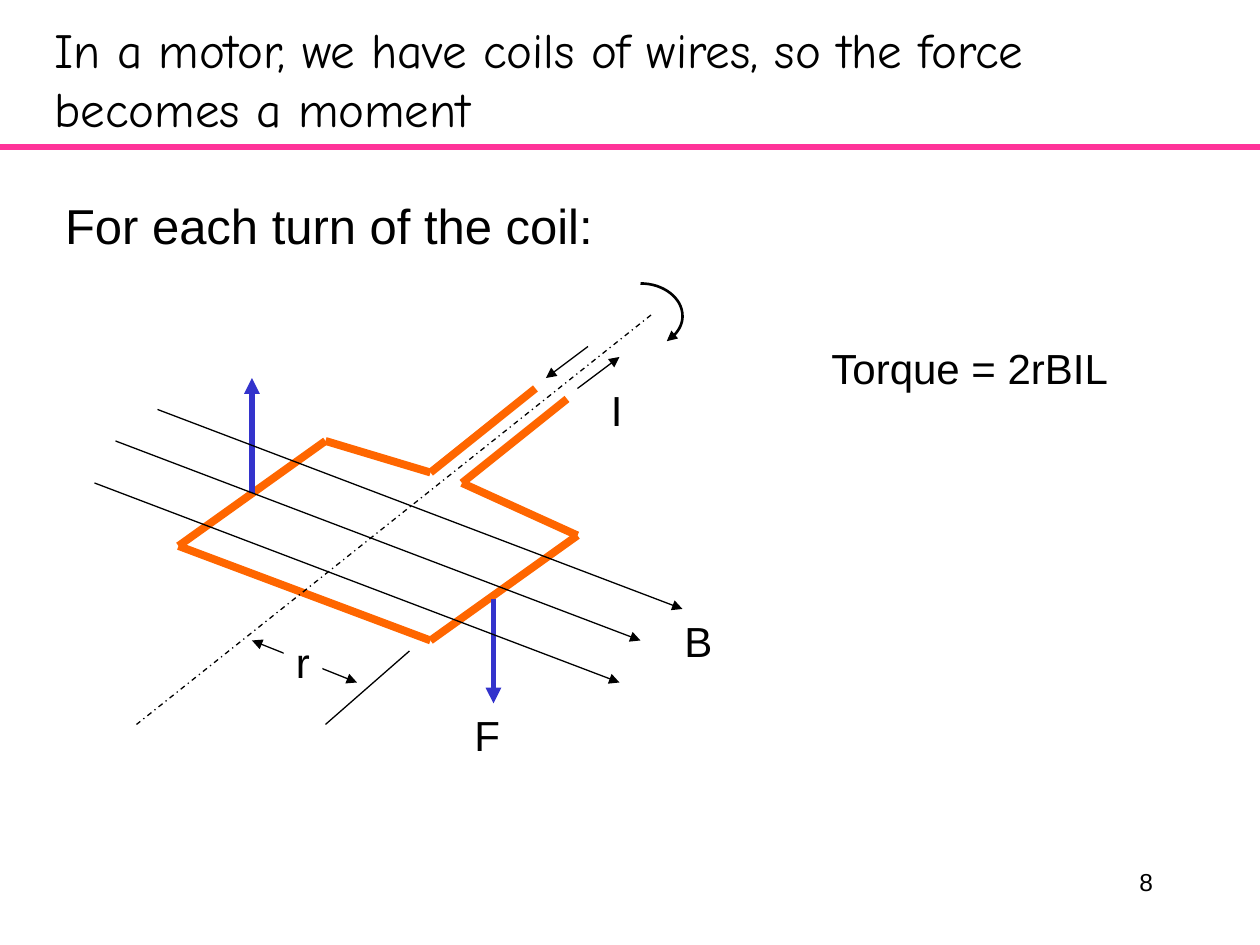
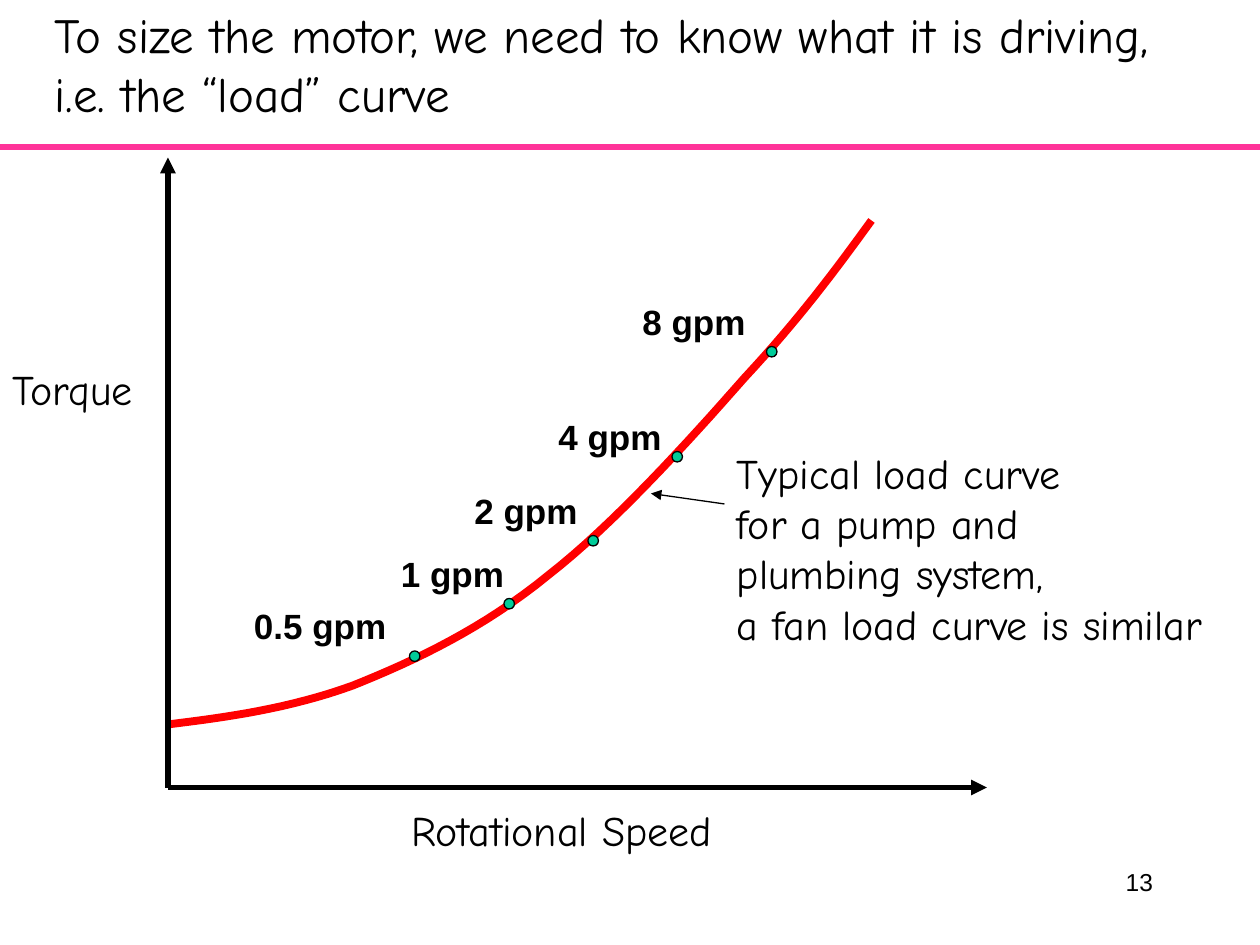
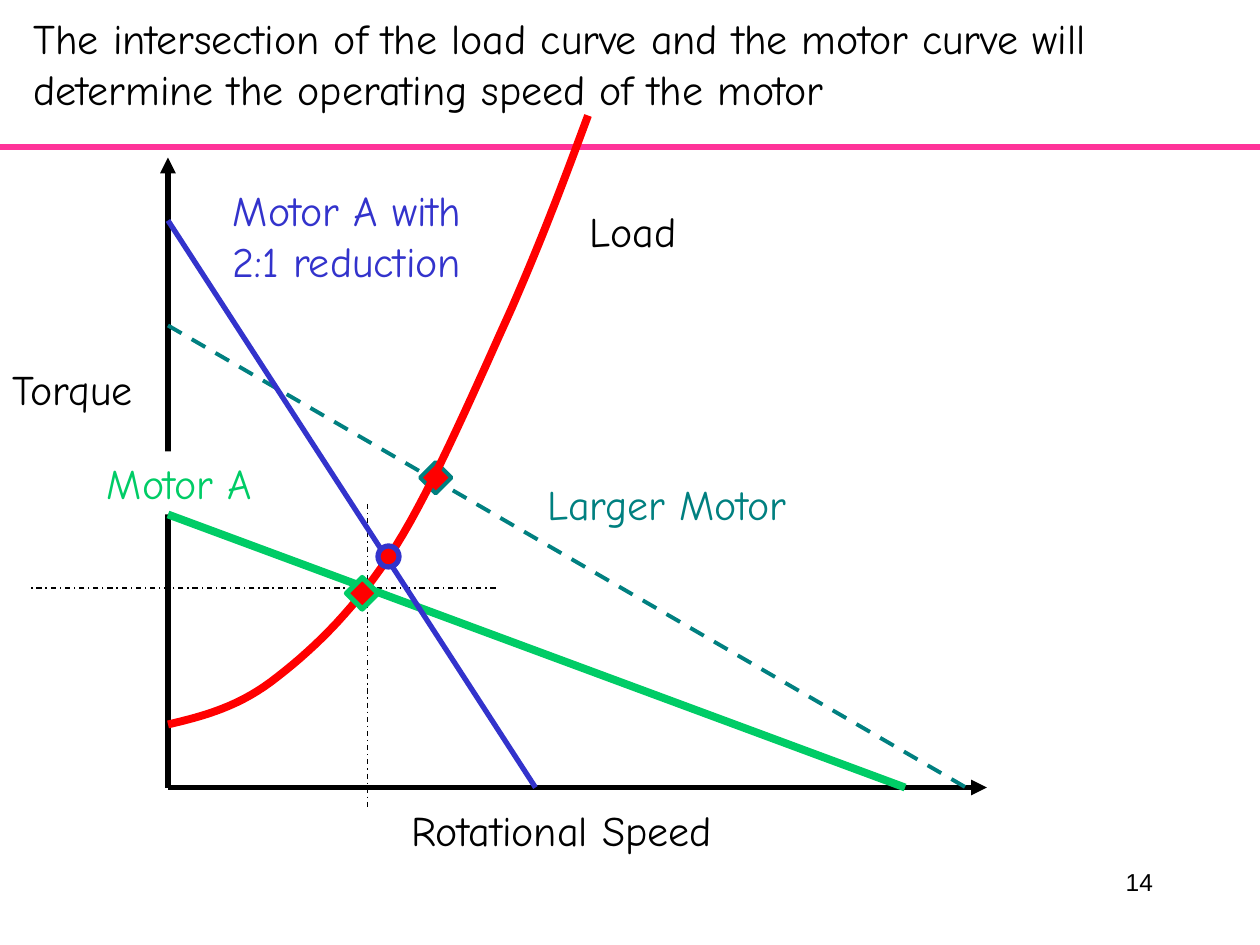
from dataclasses import dataclass
from itertools import pairwise

from lxml.etree import SubElement
from pptx import Presentation
from pptx.dml.color import RGBColor
from pptx.enum.dml import MSO_LINE
from pptx.enum.shapes import MSO_CONNECTOR, MSO_SHAPE
from pptx.enum.text import MSO_ANCHOR, MSO_AUTO_SIZE, PP_ALIGN
from pptx.oxml.ns import qn
from pptx.util import Cm, Pt


@dataclass(frozen=True)
class Theme:
    black: str = "000000"
    white: str = "FFFFFF"
    rule: str = "FF3399"
    coil: str = "FF6600"
    blue: str = "3333CC"
    red: str = "FF0000"
    teal: str = "008080"
    green: str = "00CC66"
    dot: str = "00CC99"
    plain_font: str = "Arial"
    hand_font: str = "Comic Neue"
    heading: int = 28
    label: int = 24
    point_label: int = 20
    page_number: int = 14
    hairline: float = 0.75
    thin: float = 1.5
    medium: float = 2.25
    thick: float = 3
    heavy: float = 4.5


THEME = Theme()
TITLE_AND_BODY, TITLE_ONLY = 1, 5
STEPS_ACROSS = 120
CURVE_SAMPLES = 16


def grid(steps):
    """Turn steps of the drawing grid (120 across the slide) into a length."""
    return Cm(steps * 25.4 / STEPS_ACROSS)


def write(frame, text, *, size=THEME.label, font=THEME.plain_font, color=THEME.black,
          bold=False, align=PP_ALIGN.LEFT, anchor=MSO_ANCHOR.TOP, wrap=False):
    """Fill a text frame, one paragraph for each line of text."""
    frame.word_wrap = wrap
    frame.auto_size = MSO_AUTO_SIZE.NONE
    frame.vertical_anchor = anchor
    frame.text = text
    for para in frame.paragraphs:
        para.alignment = align
        for span in para.runs:
            span.font.size = Pt(size)
            span.font.name = font
            span.font.bold = bold
            span.font.color.rgb = RGBColor.from_string(color)


def sample_curve(start, *segments):
    """Return points along joined cubic Bézier segments (control, control, end)."""
    points = [start]
    for first, second, end in segments:
        corners = (points[-1], first, second, end)
        for sample in range(1, CURVE_SAMPLES + 1):
            t = sample / CURVE_SAMPLES
            weights = ((1 - t) ** 3, 3 * t * (1 - t) ** 2, 3 * t * t * (1 - t), t ** 3)
            points.append(tuple(sum(weight * corner[axis] for weight, corner in zip(weights, corners))
                                for axis in (0, 1)))
    return points


class Sketcher:
    """Draws on the current page; every place and size is in grid steps."""

    def __init__(self, deck, theme):
        self.deck = deck
        self.theme = theme
        self.page = None

    def new_page(self, title, number, title_area, layout=TITLE_ONLY, size=THEME.heading):
        self.page = self.deck.slides.add_slide(self.deck.slide_layouts[layout])
        self.line((0, 14), (120, 14), color=self.theme.rule, width=self.theme.thick)
        self.text(str(number), (86, 82, 25, 6), size=self.theme.page_number,
                  align=PP_ALIGN.RIGHT, wrap=True)
        self.place(self.page.shapes.title, title_area)
        write(self.page.shapes.title.text_frame, title, size=size,
              font=self.theme.hand_font, anchor=MSO_ANCHOR.MIDDLE, wrap=True)

    def place(self, box, area):
        box.left, box.top, box.width, box.height = map(grid, area)

    def body(self, text, area):
        box = self.page.placeholders[1]
        self.place(box, area)
        write(box.text_frame, text, size=self.theme.heading, wrap=True)
        for para in box.element.iter(qn("a:p")):
            properties = para.get_or_add_pPr()
            properties.set("marL", str(Cm(0.95)))
            properties.set("indent", str(Cm(-0.95)))
            SubElement(properties, qn("a:buNone"))

    def text(self, text, area, **style):
        box = self.page.shapes.add_textbox(*map(grid, area))
        write(box.text_frame, text, **style)

    def shape(self, kind, area, fill, outline=None, width=THEME.hairline):
        shape = self.page.shapes.add_shape(kind, *map(grid, area))
        shape.shadow.inherit = False
        shape.fill.solid()
        shape.fill.fore_color.rgb = RGBColor.from_string(fill)
        if outline:
            self.stroke(shape, outline, width)
        else:
            shape.line.fill.background()
        return shape

    def plate(self, text, area, **style):
        """Draw a label on a white rectangle."""
        box = self.shape(MSO_SHAPE.RECTANGLE, area, self.theme.white)
        write(box.text_frame, text, **style)

    def stroke(self, shape, color, width, dash=None, head=False, tail=False):
        shape.line.color.rgb = RGBColor.from_string(color)
        shape.line.width = Pt(width)
        if dash:
            shape.line.dash_style = dash
        for wanted, tag in ((head, "a:headEnd"), (tail, "a:tailEnd")):
            if wanted:
                SubElement(shape.get_or_add_ln(), qn(tag), type="triangle")

    def line(self, start, end, color=THEME.black, width=THEME.hairline, **ends):
        connector = self.page.shapes.add_connector(
            MSO_CONNECTOR.STRAIGHT, *map(grid, (*start, *end)))
        self.stroke(connector, color, width, **ends)
        SubElement(connector.element.spPr, qn("a:effectLst"))

    def curve(self, points, color, width, **ends):
        start, *others = [(grid(x), grid(y)) for x, y in points]
        builder = self.page.shapes.build_freeform(*start)
        builder.add_line_segments(others, close=False)
        shape = builder.convert_to_shape()
        shape.shadow.inherit = False
        shape.fill.background()
        self.stroke(shape, color, width, **ends)

    def axes(self):
        origin = (16, 75)
        for tip in ((16, 15), (94, 75)):
            self.line(origin, tip, width=self.theme.thick, tail=True)
        self.text("Rotational Speed", (38, 76, 34.2, 6), font=self.theme.hand_font)
        self.text("Torque", (0, 34, 15.5, 6), font=self.theme.hand_font)


def draw_coil_page(sketch):
    theme = sketch.theme
    sketch.new_page("In a motor, we have coils of wires, so the force becomes a moment",
                    8, (4, 0, 102, 15), layout=TITLE_AND_BODY)
    sketch.body("For each turn of the coil:", (5, 18, 102, 54))

    coil = [(51, 37), (41, 45), (31, 42), (17, 52), (41, 61), (55, 51), (44, 46), (54, 38)]
    for start, end in pairwise(coil):
        sketch.line(start, end, color=theme.coil, width=theme.heavy)
    sketch.line((62, 30), (13, 69), dash=MSO_LINE.DASH_DOT)

    forces = [((47, 57), (47, 67)), ((24, 47), (24, 36))]
    for start, end in forces:
        sketch.line(start, end, color=theme.blue, width=theme.thick, tail=True)
    currents = [((56, 33), (52, 36)), ((55, 37), (59, 34))]
    field = [((15, 39), (65, 58)), ((11, 42), (61, 61)), ((9, 46), (59, 65))]
    for start, end in currents + field:
        sketch.line(start, end, tail=True)

    for label, area in (("B", (64, 58, 5, 6)), ("F", (44, 67, 4.8, 6)),
                        ("I", (57, 36, 3.5, 6)), ("Torque = 2rBIL", (78, 32, 29.2, 6))):
        sketch.text(label, area)
    sketch.line((39, 62), (31, 69))
    sketch.line((24, 61), (34, 65), head=True, tail=True)
    sketch.plate("r", (27, 60, 3.7, 6))

    turn = sample_curve((61, 27), ((63.2, 27), (65, 28.4), (65, 30.1)),
                        ((65, 31.1), (64.4, 31.9), (63.5, 32.5)))
    sketch.curve(turn, theme.black, theme.thin, tail=True)


def draw_load_page(sketch):
    theme = sketch.theme
    sketch.new_page("To size the motor, we need to know what it is driving, "
                    "i.e. the “load” curve", 13, (4, 0, 111, 12))
    load = sample_curve((16, 69), ((21.7, 68.3), (27.5, 67.5), (33.6, 65.3)),
                        ((39.6, 62.9), (46.1, 59.8), (52.2, 54.8)),
                        ((58.4, 50), (65.8, 41.8), (70.9, 36)),
                        ((76.1, 30.4), (79.6, 25.7), (83, 21)))
    sketch.curve(load, theme.red, theme.heavy)
    sketch.axes()

    flows = [("0.5 gpm", (39, 62), (23, 57, 15, 5.2)),
             ("1 gpm", (48, 57), (37, 52, 12.2, 5.2)),
             ("2 gpm", (56, 51), (44, 46, 12.2, 5.2)),
             ("4 gpm", (64, 43), (52, 39, 12.2, 5.2)),
             ("8 gpm", (73, 33), (60, 28, 12.2, 5.2))]
    for label, corner, area in flows:
        sketch.shape(MSO_SHAPE.OVAL, (*corner, 1, 1), theme.dot, theme.black)
        sketch.text(label, area, size=theme.point_label, bold=True)

    sketch.text("Typical load curve\nfor a pump and\nplumbing system,\n"
                "a fan load curve is similar", (69, 42, 47, 25.2),
                font=theme.hand_font, wrap=True)
    sketch.line((69, 48), (62, 47), tail=True)


def draw_operating_point_page(sketch):
    theme = sketch.theme
    hand = theme.hand_font
    sketch.new_page("The intersection of the load curve and the motor curve will "
                    "determine the operating speed of the motor",
                    14, (2, 0, 118, 12), size=theme.label)
    sketch.axes()
    sketch.plate("Load", (55, 19, 15.1, 6), font=hand, wrap=True)

    sketch.line((16, 31), (92, 75), color=theme.teal, width=theme.medium, dash=MSO_LINE.DASH)
    sketch.text("Larger Motor", (51, 45, 27.6, 6), font=hand, color=theme.teal)
    sketch.shape(MSO_SHAPE.DIAMOND, (40, 44, 3, 3), theme.red, theme.teal, theme.medium)

    load = sample_curve((16, 69), ((19.4, 68.2), (22.9, 67.3), (26.5, 64.4)),
                        ((30.1, 61.6), (34, 57.8), (37.7, 52)),
                        ((41.4, 46.1), (45.7, 36), (48.8, 29.2)),
                        ((51.8, 22.3), (53.9, 16.7), (56, 11)))
    sketch.curve(load, theme.red, theme.heavy)

    sketch.plate("Motor A", (9, 43, 22, 6), font=hand, color=theme.green, wrap=True)
    for start, end in (((47.2, 56), (3, 56)), ((35, 48), (35, 77))):
        sketch.line(start, end, dash=MSO_LINE.DASH_DOT)
    sketch.line((16, 49), (86.2, 75), color=theme.green, width=theme.heavy)
    sketch.shape(MSO_SHAPE.DIAMOND, (33, 55, 3, 3), theme.red, theme.green, theme.thick)

    sketch.line((16, 21), (51, 75), color=theme.blue, width=theme.thick)
    sketch.text("Motor A with\n2:1 reduction", (21, 17, 28.4, 10.8),
                font=hand, color=theme.blue)
    sketch.shape(MSO_SHAPE.OVAL, (36, 52, 2, 2), theme.red, theme.blue, theme.thick)


def main():
    deck = Presentation()
    deck.slide_width, deck.slide_height = Cm(25.4), Cm(19.05)
    sketch = Sketcher(deck, THEME)
    draw_coil_page(sketch)
    draw_load_page(sketch)
    draw_operating_point_page(sketch)
    deck.save("out.pptx")


if __name__ == "__main__":
    main()
